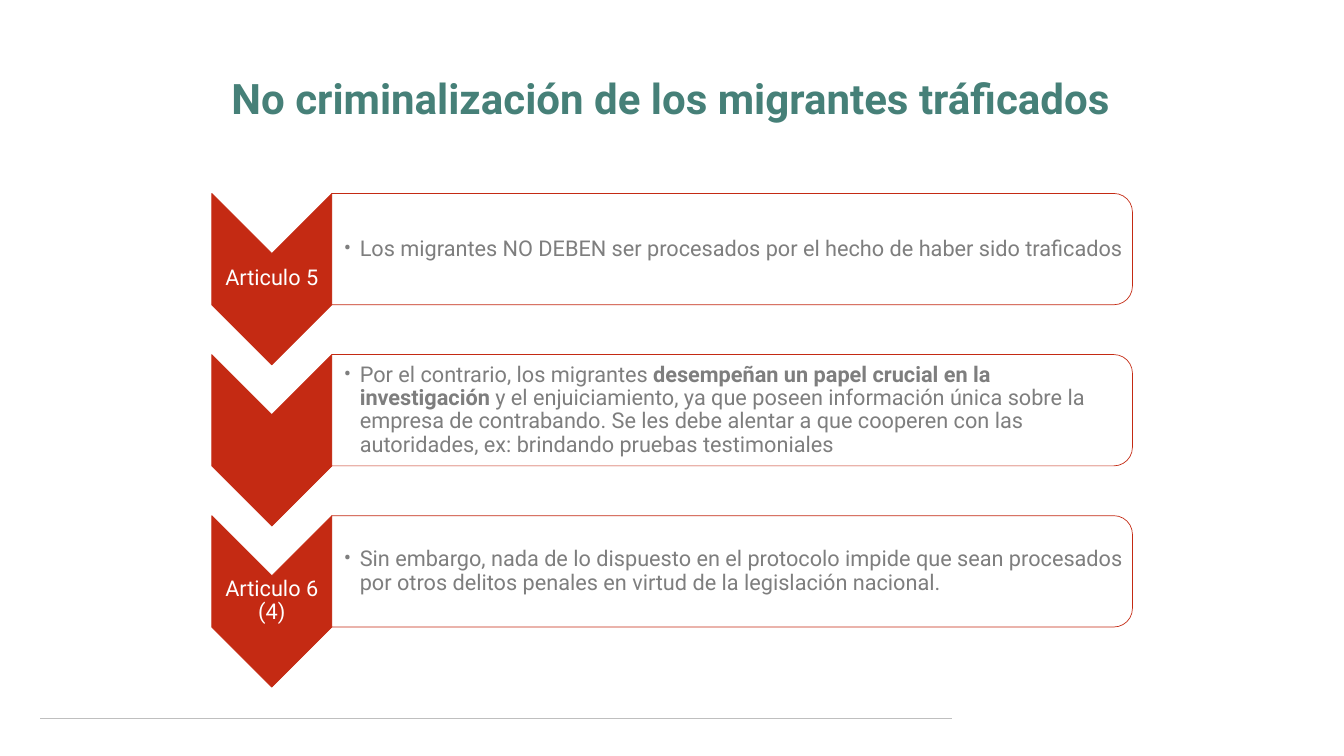
from dataclasses import dataclass

from lxml import etree
from pptx import Presentation
from pptx.dml.color import RGBColor
from pptx.enum.shapes import MSO_CONNECTOR, MSO_SHAPE
from pptx.enum.text import MSO_ANCHOR, PP_ALIGN
from pptx.oxml.ns import qn
from pptx.util import Cm, Pt

CHEVRON = MSO_SHAPE.CHEVRON
PANEL = MSO_SHAPE.ROUND_2_SAME_RECTANGLE
STRAIGHT = MSO_CONNECTOR.STRAIGHT
MIDDLE = MSO_ANCHOR.MIDDLE
LEFT, CENTER = PP_ALIGN.LEFT, PP_ALIGN.CENTER

GREEN = RGBColor(0x46, 0x80, 0x78)
RED = RGBColor(0xC4, 0x2A, 0x13)
GREY = RGBColor(0x7E, 0x7E, 0x7E)
RULE = RGBColor(0xBF, 0xBF, 0xBF)
WHITE = RGBColor(0xFF, 0xFF, 0xFF)

TITLE_FONT = {"name": "Roboto", "size": Pt(60), "bold": True}
BODY_FONT = {"name": "Roboto", "size": Pt(31), "bold": False}

# Row layout, in centimetres
FIRST_TOP, PITCH = 9.75, 8.12
ARROW_X, ARROW_W, ARROW_H = 10.67, 6.05, 8.64
PANEL_X, PANEL_W, PANEL_H = 16.72, 40.34, 5.61
INDENT = 0.8


@dataclass
class Box:
    x: float
    y: float
    w: float
    h: float


@dataclass
class Run:
    text: str
    bold: bool = False


@dataclass
class Step:
    label: str
    runs: list[Run]


STEPS = [
    Step("Articulo 5", [
        Run("Los migrantes NO DEBEN ser procesados por el hecho de haber sido traficados"),
    ]),
    Step("", [
        Run("Por el contrario, los migrantes "),
        Run("desempeñan un papel crucial en la investigación ", bold=True),
        Run("y el enjuiciamiento, ya que poseen información única sobre la empresa de "
            "contrabando. Se les debe alentar a que cooperen con las autoridades, ex: "
            "brindando pruebas testimoniales"),
    ]),
    Step("Articulo 6 (4)", [
        Run("Sin embargo, nada de lo dispuesto en el protocolo impide que sean procesados "
            "por otros delitos penales en virtud de la legislación nacional."),
    ]),
]


def add_turned_shape(slide, kind, box: Box, fill: RGBColor):
    """Add a shape turned by 90° so that it shows within box."""
    left, top = box.x + (box.w - box.h) / 2, box.y + (box.h - box.w) / 2
    sp = slide.shapes.add_shape(kind, Cm(left), Cm(top), Cm(box.h), Cm(box.w))
    sp.rotation = 90
    sp.shadow.inherit = False
    sp.fill.solid()
    sp.fill.fore_color.rgb = fill
    sp.line.color.rgb = RED
    sp.line.width = Pt(1)
    return sp


def add_text(slide, box: Box, runs: list[Run], font: dict, color: RGBColor,
             margins: tuple, align=CENTER, bullet: bool = False) -> None:
    sp = slide.shapes.add_textbox(Cm(box.x), Cm(box.y), Cm(box.w), Cm(box.h))
    tf = sp.text_frame
    tf.word_wrap = True
    tf.vertical_anchor = MIDDLE
    sides = ("margin_left", "margin_top", "margin_right", "margin_bottom")
    for side, margin in zip(sides, margins):
        setattr(tf, side, Cm(margin))
    p = tf.paragraphs[0]
    p.alignment = align
    p.line_spacing = 0.9
    if bullet:
        pPr = p._p.get_or_add_pPr()
        pPr.set("marL", str(Cm(INDENT)))
        pPr.set("indent", str(-Cm(INDENT)))
        etree.SubElement(pPr, qn("a:buFont")).set("typeface", font["name"])
        etree.SubElement(pPr, qn("a:buChar")).set("char", "•")
    for run in runs:
        r = p.add_run()
        r.text = run.text
        for name, value in font.items():
            setattr(r.font, name, value)
        r.font.bold = font["bold"] or run.bold
        r.font.color.rgb = color


def add_step(slide, step: Step, top: float) -> None:
    # Arrow and its label
    add_turned_shape(slide, CHEVRON, Box(ARROW_X, top, ARROW_W, ARROW_H), RED)
    if step.label:
        add_text(slide, Box(ARROW_X, top + 3.01, ARROW_W, 2.59), [Run(step.label)],
                 BODY_FONT, WHITE, (0.05,) * 4)
    # Panel with slightly transparent fill, and its text
    sp = add_turned_shape(slide, PANEL, Box(PANEL_X, top, PANEL_W, PANEL_H), WHITE)
    color = sp._element.spPr.find(qn("a:solidFill"))[0]
    etree.SubElement(color, qn("a:alpha")).set("val", "90000")
    add_text(slide, Box(PANEL_X, top + 0.28, 40.06, 5.05), step.runs,
             BODY_FONT, GREY, (0.61, 0.05, 0.16, 0.05), LEFT, bullet=True)


def main() -> None:
    prs = Presentation()
    prs.slide_width, prs.slide_height = Cm(67.72), Cm(38.1)
    s = prs.slides.add_slide(prs.slide_layouts[6])

    # Footer rule
    rule = s.shapes.add_connector(STRAIGHT, Cm(2.04), Cm(36.2), Cm(47.96), Cm(36.2))
    rule.line.color.rgb = RULE
    rule.line.width = Pt(2.25)
    etree.SubElement(rule._element.spPr, qn("a:effectLst"))

    # Title
    add_text(s, Box(2.03, 1.4, 63.53, 7.37),
             [Run("No criminalización de los migrantes tráficados")],
             TITLE_FONT, GREEN, (0.51, 0.25, 0.51, 0.25))

    # Steps
    for i, step in enumerate(STEPS):
        add_step(s, step, FIRST_TOP + i * PITCH)

    prs.save("out.pptx")


if __name__ == "__main__":
    main()
